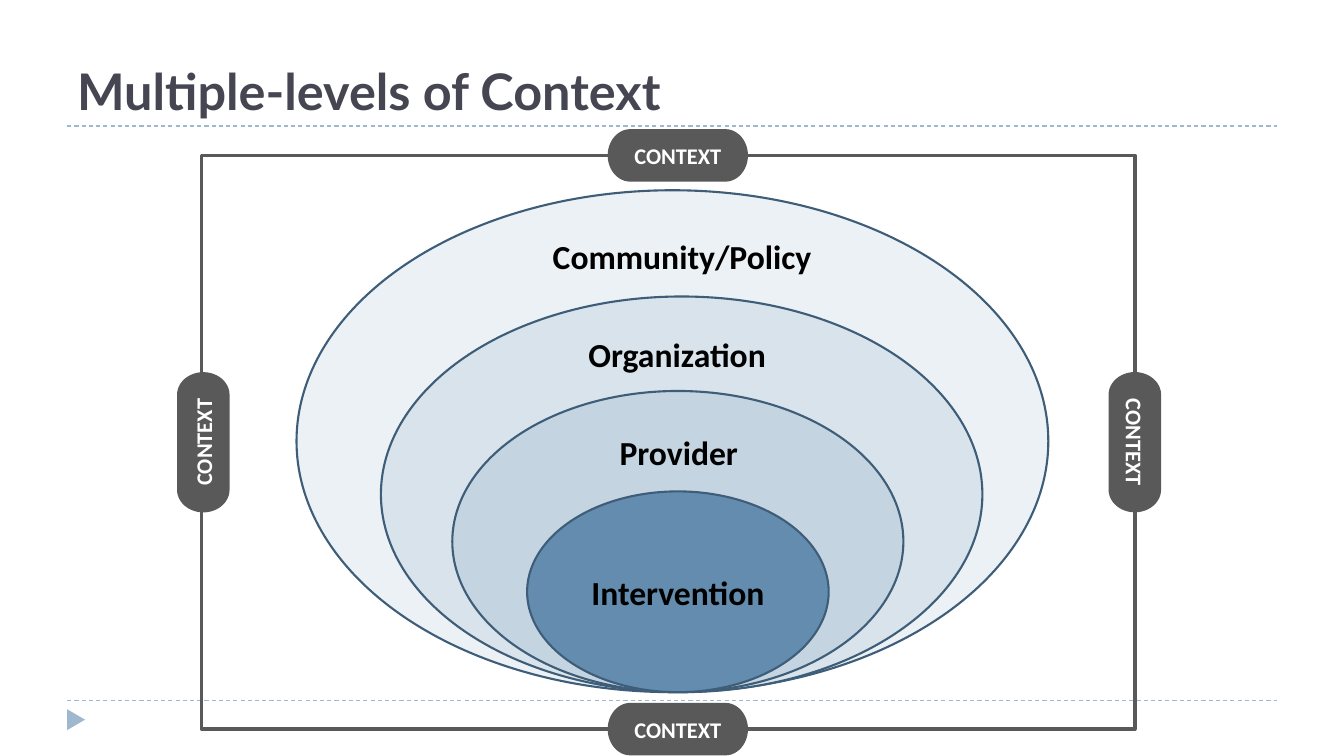
from lxml import etree
from pptx import Presentation
from pptx import util as u
from pptx.dml.color import RGBColor
from pptx.enum import dml, shapes, text
from pptx.oxml import ns

SKY = RGBColor(0x9F, 0xB8, 0xCD)
NAVY = RGBColor(0x3E, 0x5D, 0x78)
SLATE = RGBColor(0x46, 0x46, 0x53)
GREY = RGBColor(0x59, 0x59, 0x59)
BLACK = RGBColor(0, 0, 0)
WHITE = RGBColor(0xFF, 0xFF, 0xFF)
MIST = RGBColor(0xEC, 0xF1, 0xF5)
PALE = RGBColor(0xD9, 0xE3, 0xEB)
HAZE = RGBColor(0xC5, 0xD4, 0xE1)
STEEL = RGBColor(0x63, 0x8C, 0xAE)

COLUMNS, ROWS = 160, 90
Shape = shapes.MSO_SHAPE
Align = text.PP_ALIGN
Anchor = text.MSO_ANCHOR


class ContextSlide:
    body_font = "Calibri"
    title_font = "Lato"

    def __init__(self, presentation):
        self.column = presentation.slide_width / COLUMNS
        self.row = presentation.slide_height / ROWS
        self.slide = presentation.slides.add_slide(presentation.slide_layouts[6])

    def place(self, column, row, width, height):
        return (round(column * self.column), round(row * self.row),
                round(width * self.column), round(height * self.row))

    def set_text(self, shape, words, size, color, font=body_font,
                 align=Align.CENTER, anchor=Anchor.MIDDLE, wrap=True):
        frame = shape.text_frame
        frame.word_wrap = wrap
        frame.vertical_anchor = anchor
        paragraph = frame.paragraphs[0]
        paragraph.text = words
        paragraph.alignment = align
        paragraph.font.name = font
        paragraph.font.size = u.Pt(size)
        paragraph.font.bold = True
        paragraph.font.color.rgb = color

    def rule(self, row):
        left, top, width, _ = self.place(8, row, 144, 0)
        line = self.slide.shapes.add_connector(
            shapes.MSO_CONNECTOR.STRAIGHT, left, top, left + width, top)
        line.line.color.rgb = SKY
        line.line.width = u.Pt(0.75)
        line.line.dash_style = dml.MSO_LINE.DASH
        etree.SubElement(line._element.spPr, ns.qn("a:effectLst"))

    def shape(self, kind, box, fill=None, line=None, weight=1.5, rotation=0):
        shape = self.slide.shapes.add_shape(kind, *self.place(*box))
        shape.shadow.inherit = False
        shape.rotation = rotation
        if fill is None:
            shape.fill.background()
        else:
            shape.fill.solid()
            shape.fill.fore_color.rgb = fill
        if line is None:
            shape.line.fill.background()
        else:
            shape.line.color.rgb = line
            shape.line.width = u.Pt(weight)
        return shape

    def title(self, words):
        box = self.slide.shapes.add_textbox(*self.place(8, 3, 144, 12))
        self.set_text(box, words, 36, SLATE, self.title_font, Align.LEFT, Anchor.BOTTOM)

    def level(self, center, width, height, fill):
        bottom = 82.4
        box = (center - width / 2, bottom - height, width, height)
        return self.shape(Shape.OVAL, box, fill, NAVY)

    def label(self, words, center, row):
        width = 34
        box = self.slide.shapes.add_textbox(
            *self.place(center - width / 2, row, width, 6))
        self.set_text(box, words, 24, BLACK, anchor=Anchor.TOP, wrap=False)

    def pill(self, words, center, middle, rotation):
        width, height = 16.7, 6.25
        box = (center - width / 2, middle - height / 2, width, height)
        pill = self.shape(Shape.FLOWCHART_TERMINATOR, box, GREY, rotation=rotation)
        self.set_text(pill, words, 16, WHITE)


def main():
    presentation = Presentation()
    presentation.slide_width = u.Inches(13.33)
    presentation.slide_height = u.Inches(7.5)
    page = ContextSlide(presentation)

    for row in (83.4, 15):
        page.rule(row)
    page.shape(Shape.ISOSCELES_TRIANGLE, (7.8, 84.6, 2.5, 2.15), SKY, rotation=90)

    for center, width, height, fill in (
        (80.05, 89.5, 59.75, MIST),
        (81.15, 71.6, 47.1, PALE),
        (80.7, 53.7, 35.85, HAZE),
    ):
        page.level(center, width, height, fill)
    core = page.level(80.7, 35.9, 23.9, STEEL)
    page.set_text(core, "Intervention", 24, BLACK)

    for words, center, row in (
        ("Provider", 80.8, 50.8),
        ("Organization", 80.6, 39.2),
        ("Community/Policy", 81.2, 27.5),
    ):
        page.label(words, center, row)

    page.title("Multiple-levels of Context")

    left, top, width, height = frame = (24, 18.5, 111.1, 68.3)
    page.shape(Shape.RECTANGLE, frame, line=GREY, weight=2.5)
    center, middle = 80.7, top + height / 2
    for column, row, rotation in (
        (center, top, 0),
        (center, top + height, 0),
        (left + 0.2, middle, 270),
        (left + width, middle, 90),
    ):
        page.pill("CONTEXT", column, row, rotation)

    presentation.save("out.pptx")


if __name__ == "__main__":
    main()
